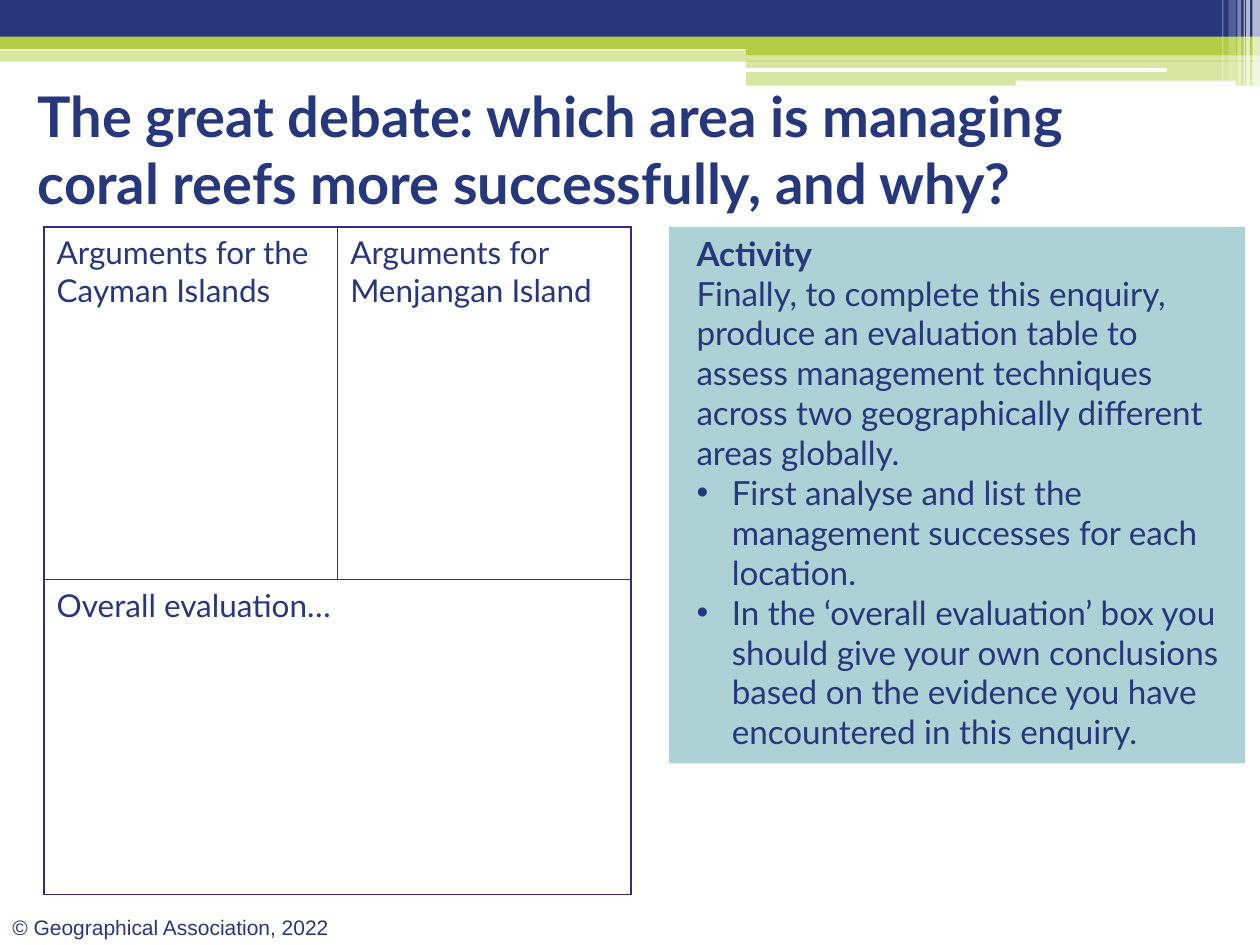
from lxml import etree
from pptx import Presentation
from pptx import util as u
from pptx.dml.color import RGBColor
from pptx.enum import shapes, text
from pptx.oxml.ns import qn

COLORS = {
    "navy": "26377C",
    "lime": "B4CE44",
    "white": "FFFFFF",
    "teal": "ADD2D6",
    "border": "352B84",
}


def add_element(parent, tag, **attributes):
    return etree.SubElement(parent, qn(tag), attributes)


def write(paragraph, words, size=18, font="Lato", color="navy", bold=False,
          margin=0, indent=0, bullet=None):
    """Put formatted text in a paragraph, with an optional indent and bullet."""
    if margin:
        properties = paragraph._p.get_or_add_pPr()
        properties.set("marL", str(u.Inches(margin)))
        properties.set("indent", str(u.Inches(indent)))
        if bullet:
            add_element(properties, "a:buFont", typeface="Arial")
            add_element(properties, "a:buChar", char=bullet)
    run = paragraph.add_run()
    run.text = words
    run.font.size = u.Pt(size)
    run.font.name = font
    run.font.bold = bold
    run.font.color.rgb = RGBColor.from_string(COLORS[color])


class SlideBuilder:
    def __init__(self, slide):
        self.slide = slide

    def block(self, left, top, width, height, color, opacity=100, rounded=False):
        kind = shapes.MSO_SHAPE.ROUNDED_RECTANGLE if rounded else shapes.MSO_SHAPE.RECTANGLE
        shape = self.slide.shapes.add_shape(
            kind, *map(u.Inches, (left, top, width, height)))
        shape.shadow.inherit = False
        shape.line.fill.background()
        shape.fill.solid()
        shape.fill.fore_color.rgb = RGBColor.from_string(COLORS[color])
        if opacity < 100:
            color_element = shape.fill._xPr.find(qn("a:solidFill"))[0]
            add_element(color_element, "a:alpha", val=str(opacity * 1000))
        return shape

    def fill_frame(self, frame, paragraphs, anchor):
        frame.word_wrap = True
        frame.vertical_anchor = anchor
        for index, (words, style) in enumerate(paragraphs):
            paragraph = frame.add_paragraph() if index else frame.paragraphs[0]
            paragraph.alignment = text.PP_ALIGN.LEFT
            write(paragraph, words, **style)

    def label(self, left, top, width, height, words,
              anchor=text.MSO_ANCHOR.TOP, **style):
        box = self.slide.shapes.add_textbox(
            *map(u.Inches, (left, top, width, height)))
        self.fill_frame(box.text_frame, [(words, style)], anchor)

    def panel(self, left, top, width, height, color, paragraphs):
        shape = self.block(left, top, width, height, color)
        self.fill_frame(shape.text_frame, paragraphs, text.MSO_ANCHOR.TOP)

    def border(self, cell):
        properties = cell._tc.get_or_add_tcPr()
        for position, side in enumerate(("a:lnL", "a:lnR", "a:lnT", "a:lnB")):
            line = etree.Element(qn(side), w=str(u.Pt(1)))
            fill = add_element(line, "a:solidFill")
            add_element(fill, "a:srgbClr", val=COLORS["border"])
            properties.insert(position, line)

    def table(self, left, top, columns, rows, entries):
        table = self.slide.shapes.add_table(
            len(rows), len(columns), u.Inches(left), u.Inches(top),
            u.Inches(sum(columns)), u.Inches(sum(rows))).table
        table.first_row = table.horz_banding = False
        for column, width in zip(table.columns, columns):
            column.width = u.Inches(width)
        for row, height in zip(table.rows, rows):
            row.height = u.Inches(height)
        for cell in table.iter_cells():
            cell.fill.background()
            self.border(cell)
        for (row, column), words in entries.items():
            write(table.cell(row, column).text_frame.paragraphs[0], words)
        return table


def main():
    presentation = Presentation()
    presentation.slide_width = u.Inches(10)
    presentation.slide_height = u.Inches(7.5)
    builder = SlideBuilder(presentation.slides.add_slide(presentation.slide_layouts[6]))

    # Header bands
    builder.block(0, 0.4, 10, 0.09, "lime", 50)
    builder.block(0, 0, 10, 0.34, "navy")
    builder.block(0, 0.29, 10, 0.1, "lime")
    builder.block(5.92, 0.34, 4.08, 0.1, "lime")
    builder.block(5.92, 0.48, 4.08, 0.2, "lime", 50)
    builder.block(5.91, 0.54, 3.35, 0.03, "white", rounded=True)
    builder.block(8.06, 0.64, 1.75, 0.04, "white", rounded=True)

    # Translucent stripes in the corner: left, width, height, opacity
    for left, width, height, opacity in (
            (9.94, 0.06, 0.68, 65), (9.89, 0.03, 0.68, 65), (9.87, 0.01, 0.68, 60),
            (9.82, 0.03, 0.68, 40), (9.75, 0.06, 0.64, 20), (9.7, 0.01, 0.64, 30)):
        builder.block(left, 0, width, height, "white", opacity)

    # Footer and title
    builder.label(0, 7.21, 2.87, 0.3, "© Geographical Association, 2022",
                  size=12, font="Arial")
    builder.label(0.2, 0.44, 9.37, 1.48,
                  "The great debate: which area is managing coral reefs "
                  "more successfully, and why?",
                  anchor=text.MSO_ANCHOR.MIDDLE, size=32, bold=True)

    # Evaluation table
    table = builder.table(0.35, 1.8, [2.33, 2.33], [2.8, 2.5], {
        (0, 0): "Arguments for the Cayman Islands",
        (0, 1): "Arguments for Menjangan Island",
        (1, 0): "Overall evaluation…",
    })
    table.cell(1, 0).merge(table.cell(1, 1))

    # Activity panel
    plain = {"size": 19, "margin": 0.12}
    bulleted = {"size": 19, "margin": 0.4, "indent": -0.28, "bullet": "•"}
    builder.panel(5.31, 1.8, 4.57, 4.26, "teal", [
        ("Activity", {**plain, "bold": True}),
        ("Finally, to complete this enquiry, produce an evaluation table to assess "
         "management techniques across two geographically different areas globally.",
         plain),
        ("First analyse and list the management successes for each location.", bulleted),
        ("In the ‘overall evaluation’ box you should give your own conclusions based "
         "on the evidence you have encountered in this enquiry.", bulleted),
    ])

    presentation.save("out.pptx")


if __name__ == "__main__":
    main()
